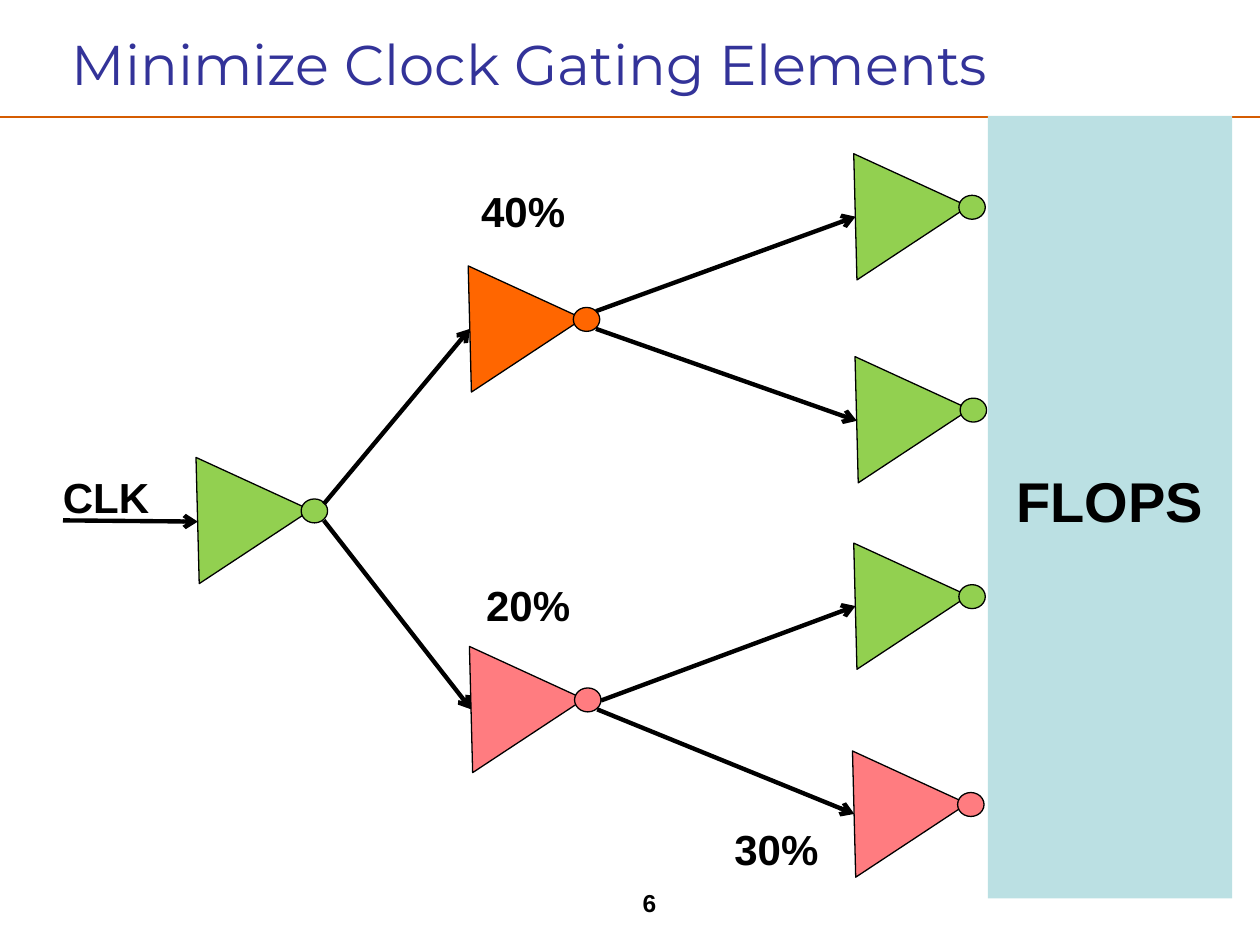
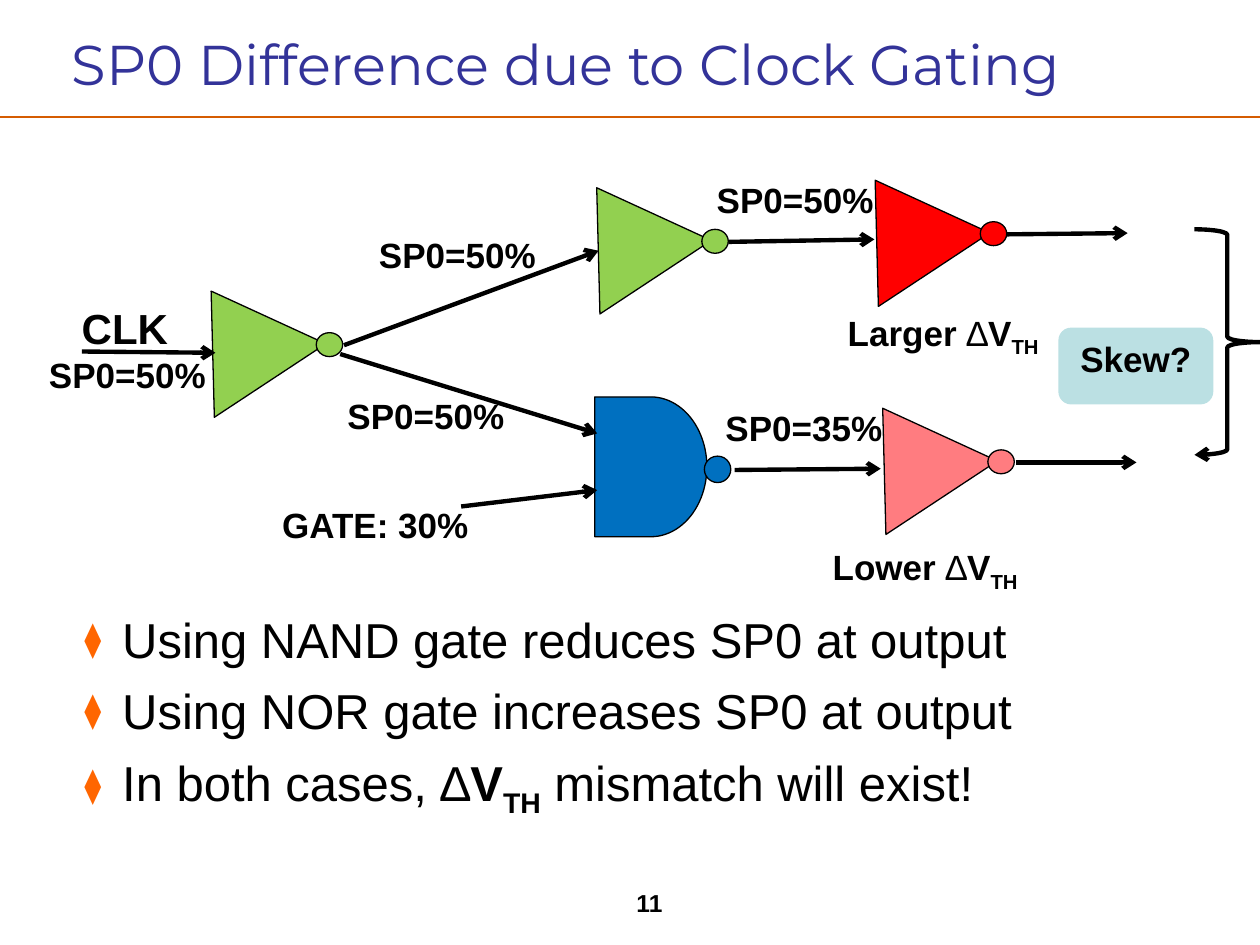
from typing import NamedTuple

from lxml import etree
from pptx import Presentation
from pptx.dml.color import RGBColor
from pptx.enum import shapes, text
from pptx.oxml.ns import qn
from pptx.util import Inches, Pt

BLACK, NAVY, RUST = "000000", "333399", "D55C01"
GREEN, ORANGE, PINK, RED = "92D050", "FF6600", "FF7C80", "FF0000"
BLUE, TEAL = "0070C0", "BBE0E3"
BODY_FONT, TITLE_FONT = "Arial", "Montserrat"
TITLE_ONLY, TITLE_AND_BODY = 5, 1
Preset = shapes.MSO_SHAPE


class Span(NamedTuple):
    text: str
    bold: bool = True
    baseline: int = 0


class Inverter(NamedTuple):
    left: float
    top: float
    color: str


class Wire(NamedTuple):
    x1: float
    y1: float
    x2: float
    y2: float


class Label(NamedTuple):
    left: float
    top: float
    width: float
    spans: tuple[Span, ...]
    size: int = 20


VTH = (Span("∆", False), Span("V"), Span("TH", True, -25))


def rgb(color: str) -> RGBColor:
    return RGBColor.from_string(color)


def box(left: float, top: float, width: float, height: float) -> tuple:
    return Inches(left), Inches(top), Inches(width), Inches(height)


def style_font(paragraph, size: float, color: str = BLACK, name: str = BODY_FONT, bold=None) -> None:
    font = paragraph.font
    font.size, font.name, font.bold = Pt(size), name, bold
    font.color.rgb = rgb(color)


def write_spans(paragraph, spans: tuple[Span, ...]) -> None:
    for span in spans:
        run = paragraph.add_run()
        run.text = span.text
        run.font.bold = span.bold
        if span.baseline:
            run._r.get_or_add_rPr().set("baseline", str(span.baseline * 1000))


def add_arrowhead(line) -> None:
    etree.SubElement(line._get_or_add_ln(), qn("a:tailEnd"), type="arrow")


def draw_line(slide, wire: Wire, color: str = BLACK, width: float = 2.5, arrow: bool = True) -> None:
    connector = slide.shapes.add_connector(
        shapes.MSO_CONNECTOR.STRAIGHT, *(Inches(value) for value in wire))
    connector.line.color.rgb = rgb(color)
    connector.line.width = Pt(width)
    if arrow:
        add_arrowhead(connector.line)
    etree.SubElement(connector._element.spPr, qn("a:effectLst"))


def draw_shape(parent, preset, place: tuple, fill: str | None = None, outline: float | None = None):
    shape = parent.shapes.add_shape(preset, *place)
    shape.shadow.inherit = False
    if fill:
        shape.fill.solid()
        shape.fill.fore_color.rgb = rgb(fill)
    else:
        shape.fill.background()
    if outline:
        shape.line.color.rgb = rgb(BLACK)
        shape.line.width = Pt(outline)
    else:
        shape.line.fill.background()
    return shape


def draw_inverter(slide, gate: Inverter) -> None:
    group = slide.shapes.add_group_shape()
    buffer = draw_shape(group, Preset.ISOSCELES_TRIANGLE,
                        box(gate.left, gate.top, 1.06, 0.85), gate.color, 0.75)
    buffer.rotation = 326.6
    draw_shape(group, Preset.OVAL,
               box(gate.left + 1.13, gate.top + 0.4, 0.21, 0.19), gate.color, 0.75)


def draw_panel(slide, preset, place: tuple, caption: str, size: int, margin_top: float) -> None:
    panel = draw_shape(slide, preset, place, TEAL)
    frame = panel.text_frame
    frame.vertical_anchor = text.MSO_ANCHOR.TOP
    frame.margin_top = Inches(margin_top)
    paragraph = frame.paragraphs[0]
    paragraph.alignment = text.PP_ALIGN.CENTER
    write_spans(paragraph, (Span(caption),))
    style_font(paragraph, size, bold=True)


def draw_label(slide, label: Label, align=text.PP_ALIGN.LEFT) -> None:
    frame = slide.shapes.add_textbox(
        *box(label.left, label.top, label.width, 0.1 + label.size / 60)).text_frame
    frame.word_wrap = False
    paragraph = frame.paragraphs[0]
    paragraph.alignment = align
    write_spans(paragraph, label.spans)
    style_font(paragraph, label.size)


def start_slide(deck, layout: int, heading: str, number: int):
    slide = deck.slides.add_slide(deck.slide_layouts[layout])
    draw_line(slide, Wire(0, 0.93, 10, 0.93), RUST, 1, arrow=False)
    title = slide.shapes.title
    title.left, title.top, title.width, title.height = box(0.47, 0.11, 9.05, 0.78)
    frame = title.text_frame
    frame.text = heading
    frame.auto_size = text.MSO_AUTO_SIZE.NONE
    frame.vertical_anchor = text.MSO_ANCHOR.MIDDLE
    paragraph = frame.paragraphs[0]
    paragraph.alignment = text.PP_ALIGN.LEFT
    style_font(paragraph, 32, NAVY, TITLE_FONT)
    draw_label(slide, Label(3.99, 7, 2.33, (Span(str(number)),), 14), text.PP_ALIGN.CENTER)
    return slide


def draw_circuit(slide, inverters: list[Inverter], wires: list[Wire], labels: list[Label]) -> None:
    for gate in inverters:
        draw_inverter(slide, gate)
    for wire in wires:
        draw_line(slide, wire)
    for label in labels:
        draw_label(slide, label)


def fill_bullets(body, points: list[tuple[Span, ...]]) -> None:
    body.left, body.top, body.width, body.height = box(0.44, 4.79, 9.16, 2.07)
    frame = body.text_frame
    frame.auto_size = text.MSO_AUTO_SIZE.NONE
    for index, point in enumerate(points):
        paragraph = frame.add_paragraph() if index else frame.paragraphs[0]
        paragraph.space_before = Pt(7)
        properties = paragraph._p.get_or_add_pPr()
        properties.set("marL", str(Inches(0.43)))
        properties.set("indent", str(Inches(-0.3)))
        bullet_color = etree.SubElement(properties, qn("a:buClr"))
        etree.SubElement(bullet_color, qn("a:srgbClr"), val=ORANGE)
        etree.SubElement(properties, qn("a:buSzPct"), val="70000")
        etree.SubElement(properties, qn("a:buChar"), char="⧫")
        write_spans(paragraph, point)
        style_font(paragraph, 28)


def build_gating_elements(deck) -> None:
    slide = start_slide(deck, TITLE_ONLY, "Minimize Clock Gating Elements", 6)
    inverters = [
        Inverter(6.48, 1.15, GREEN),
        Inverter(6.49, 2.76, GREEN),
        Inverter(6.48, 4.24, GREEN),
        Inverter(6.47, 5.89, PINK),
        Inverter(3.42, 2.04, ORANGE),
        Inverter(3.43, 5.06, PINK),
        Inverter(1.26, 3.56, GREEN),
    ]
    wires = [
        Wire(0.5, 4.13, 1.57, 4.14),
        Wire(2.57, 4, 3.73, 2.61),
        Wire(2.57, 4.13, 3.74, 5.63),
        Wire(4.73, 2.47, 6.79, 1.72),
        Wire(4.73, 2.61, 6.8, 3.34),
        Wire(4.77, 5.56, 6.79, 4.81),
        Wire(4.74, 5.63, 6.78, 6.46),
    ]
    labels = [
        Label(0.4, 3.69, 0.89, (Span("CLK"),), 24),
        Label(3.76, 4.55, 0.88, (Span("20%"),), 24),
        Label(3.72, 1.42, 0.88, (Span("40%"),), 24),
        Label(5.73, 6.49, 0.88, (Span("30%"),), 24),
    ]
    draw_circuit(slide, inverters, wires, labels)
    draw_panel(slide, Preset.RECTANGLE, box(7.84, 0.92, 1.94, 6.21), "FLOPS", 32, 2.78)


def build_sp0_difference(deck) -> None:
    slide = start_slide(deck, TITLE_AND_BODY, "SP0 Difference due to Clock Gating", 11)
    inverters = [
        Inverter(1.38, 2.24, GREEN),
        Inverter(4.44, 1.42, GREEN),
        Inverter(6.65, 1.36, RED),
        Inverter(6.71, 3.17, PINK),
    ]
    wires = [
        Wire(0.65, 2.79, 1.71, 2.8),
        Wire(2.73, 2.74, 4.75, 1.99),
        Wire(2.7, 2.81, 4.74, 3.44),
        Wire(3.66, 4.02, 4.74, 3.89),
        Wire(5.78, 1.92, 6.94, 1.9),
        Wire(5.83, 3.73, 6.99, 3.72),
        Wire(7.99, 1.86, 8.95, 1.85),
        Wire(8.06, 3.67, 9.02, 3.67),
    ]
    half = (Span("SP0=50%"),)
    labels = [
        Label(0.55, 2.35, 0.89, (Span("CLK"),), 24),
        Label(0.29, 2.76, 1.46, half),
        Label(2.91, 1.8, 1.46, half),
        Label(2.66, 3.08, 1.46, half),
        Label(5.59, 1.37, 1.46, half),
        Label(5.66, 3.18, 1.46, (Span("SP0=35%"),)),
        Label(2.14, 3.95, 1.69, (Span("GATE: 30%"),)),
        Label(6.63, 2.42, 1.76, (Span("Larger "), *VTH)),
        Label(6.51, 4.28, 1.71, (Span("Lower "), *VTH)),
    ]
    draw_shape(slide, Preset.FLOWCHART_DELAY, box(4.72, 3.15, 0.89, 1.11), BLUE, 0.75)
    draw_shape(slide, Preset.OVAL, box(5.59, 3.62, 0.21, 0.21), BLUE, 0.75)
    draw_circuit(slide, inverters, wires, labels)
    draw_panel(slide, Preset.ROUNDED_RECTANGLE, box(8.4, 2.6, 1.23, 0.61), "Skew?", 20, 0.05)
    skew_brace = draw_shape(slide, Preset.LEFT_BRACE, box(9.48, 1.82, 0.52, 1.79), outline=2.5)
    skew_brace.rotation = 180
    add_arrowhead(skew_brace.line)
    fill_bullets(slide.placeholders[1], [
        (Span("Using NAND gate reduces SP0 at output", False),),
        (Span("Using NOR gate increases SP0 at output", False),),
        (Span("In both cases, ", False), *VTH, Span(" mismatch will exist!", False)),
    ])


def main() -> None:
    deck = Presentation()
    deck.slide_width, deck.slide_height = Inches(10), Inches(7.5)
    build_gating_elements(deck)
    build_sp0_difference(deck)
    deck.save("out.pptx")


if __name__ == "__main__":
    main()
